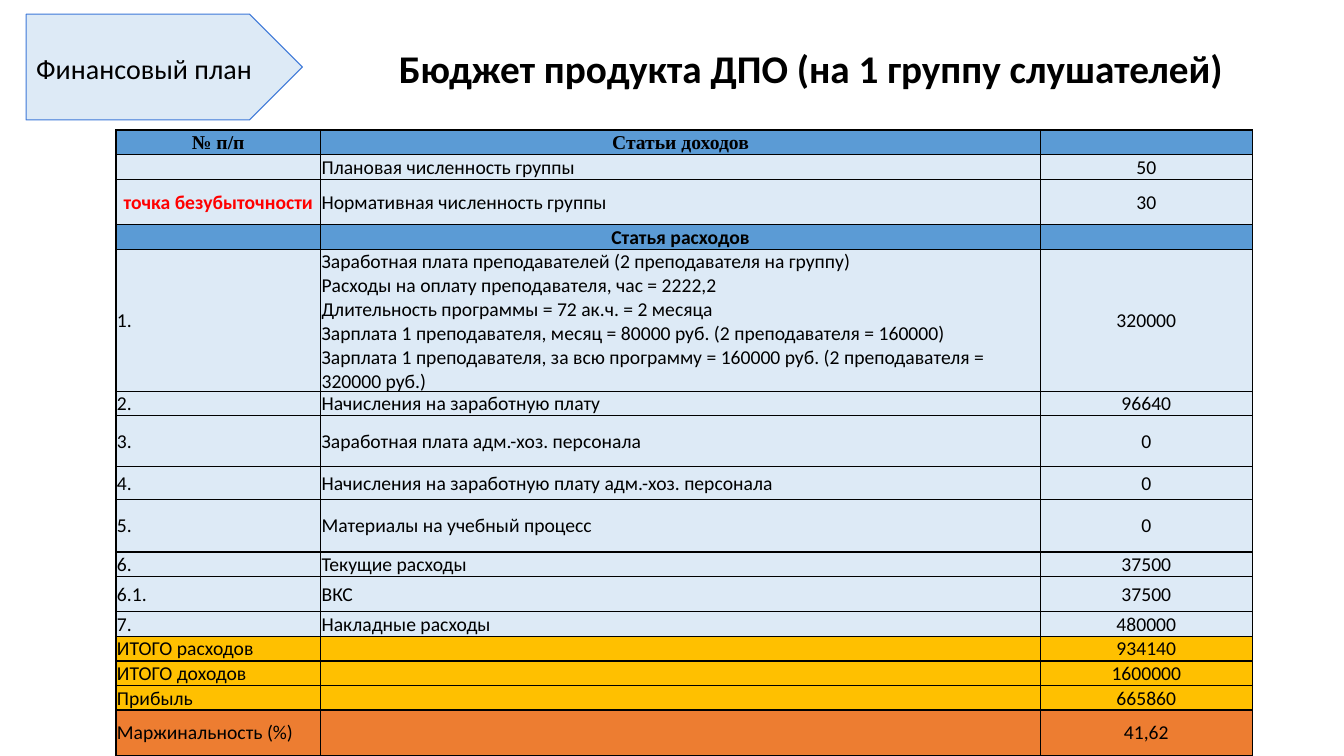
from lxml import etree
from pptx import Presentation
from pptx.dml.color import RGBColor
from pptx.enum.shapes import MSO_SHAPE
from pptx.enum.text import MSO_ANCHOR, PP_ALIGN
from pptx.oxml.ns import qn
from pptx.util import Inches, Pt

PENTAGON = MSO_SHAPE.PENTAGON
TOP, MIDDLE = MSO_ANCHOR.TOP, MSO_ANCHOR.MIDDLE
LEFT, CENTER = PP_ALIGN.LEFT, PP_ALIGN.CENTER

SECTION = "Финансовый план"
TITLE = "Бюджет продукта ДПО (на 1 группу слушателей)"
SALARY = """Заработная плата преподавателей (2 преподавателя на группу)
Расходы на оплату преподавателя, час = 2222,2
Длительность программы = 72 ак.ч. = 2 месяца
Зарплата 1 преподавателя, месяц = 80000 руб. (2 преподавателя = 160000)
Зарплата 1 преподавателя, за всю программу = 160000 руб. (2 преподавателя = 320000 руб.)"""
BUDGET = [
    ("income", 0.23, "№ п/п", "Статьи доходов", ""),
    ("item", 0.23, "", "Плановая численность группы", "50"),
    ("breakeven", 0.45, "точка безубыточности", "Нормативная численность группы", "30"),
    ("expense", 0.23, "", "Статья расходов", ""),
    ("item", 1.35, "1.", SALARY, "320000"),
    ("item", 0.23, "2.", "Начисления на заработную плату", "96640"),
    ("item", 0.5, "3.", "Заработная плата адм.-хоз. персонала", "0"),
    ("item", 0.33, "4.", "Начисления на заработную плату адм.-хоз. персонала", "0"),
    ("item", 0.52, "5.", "Материалы на учебный процесс", "0"),
    ("item", 0.23, "6.", "Текущие расходы", "37500"),
    ("item", 0.35, "6.1.", "ВКС", "37500"),
    ("item", 0.23, "7.", "Накладные расходы", "480000"),
    ("total", 0.23, "ИТОГО расходов", "", "934140"),
    ("total", 0.23, "ИТОГО доходов", "", "1600000"),
    ("total", 0.23, "Прибыль", "", "665860"),
    ("margin", 0.45, "Маржинальность (%)", "", "41,62"),
]
COLUMN_WIDTHS = [2.03, 7.14, 2.1]
FILLS = {"income": "5B9BD5", "expense": "5B9BD5", "item": "DDEAF6",
         "breakeven": "DDEAF6", "total": "FFC000", "margin": "ED7D31"}
CELL_FORMAT = {"margin_left": Inches(0.01), "margin_right": Inches(0.01),
               "margin_top": Inches(0.01), "margin_bottom": 0, "vertical_anchor": MIDDLE}


def color(value):
    return RGBColor.from_string(value)


def apply(target, values):
    for name, value in values.items():
        setattr(target, name, value)


def write(frame, text, size, align=LEFT, bold=False, ink="000000", face="Calibri", spacing=None):
    for index, line in enumerate(text.split("\n")):
        para = frame.add_paragraph() if index else frame.paragraphs[0]
        apply(para, {"alignment": align, "line_spacing": spacing})
        if not line:
            etree.SubElement(para._p, qn("a:endParaRPr"), sz=str(size * 100))
            continue
        span = para.add_run()
        span.text = line
        apply(span.font, {"size": Pt(size), "bold": bold, "name": face})
        span.font.color.rgb = color(ink)


def add_label(page, place, text, size, margin, anchor, **style):
    frame = page.shapes.add_textbox(*map(Inches, place)).text_frame
    apply(frame, {"word_wrap": True, "vertical_anchor": anchor,
                  "margin_left": Inches(0.1), "margin_right": Inches(0.1),
                  "margin_top": Inches(margin), "margin_bottom": Inches(margin)})
    write(frame, text, size, **style)


def add_borders(cell):
    properties = cell._tc.get_or_add_tcPr()
    for side in ("a:lnL", "a:lnR", "a:lnT", "a:lnB"):
        line = etree.SubElement(properties, qn(side), w=str(Pt(1)))
        fill = etree.SubElement(line, qn("a:solidFill"))
        etree.SubElement(fill, qn("a:srgbClr"), val="000000")


def add_budget(page):
    heights = [row[1] for row in BUDGET]
    place = (1.15, 1.29, sum(COLUMN_WIDTHS), sum(heights))
    table = page.shapes.add_table(len(BUDGET), len(COLUMN_WIDTHS), *map(Inches, place)).table
    for column, width in zip(table.columns, COLUMN_WIDTHS):
        column.width = Inches(width)
    for row, (kind, height, *texts) in zip(table.rows, BUDGET):
        row.height = Inches(height)
        heading = kind in ("income", "expense")
        for index, (cell, text) in enumerate(zip(row.cells, texts)):
            warning = kind == "breakeven" and index == 0
            apply(cell, CELL_FORMAT)
            add_borders(cell)
            cell.fill.solid()
            cell.fill.fore_color.rgb = color(FILLS[kind])
            write(cell.text_frame, text, 14,
                  align=CENTER if heading or warning or index == 2 else LEFT,
                  bold=heading or warning,
                  ink="FF0000" if warning else "000000",
                  face="Times New Roman" if kind == "income" else "Calibri")


def main():
    """Build the budget slide and save it."""
    deck = Presentation()
    apply(deck, {"slide_width": Inches(13.33), "slide_height": Inches(7.5)})
    page = deck.slides.add_slide(deck.slide_layouts[6])
    banner = page.shapes.add_shape(PENTAGON, *map(Inches, (0.26, 0.14, 2.74, 1.05)))
    banner.shadow.inherit = False
    banner.fill.solid()
    banner.fill.fore_color.rgb = color("DDEAF6")
    banner.line.color.rgb = color("3C78D8")
    banner.line.width = Pt(0.75)
    add_label(page, (0.26, 0.41, 2.55, 0.54), SECTION, 20, 0.1, TOP)
    add_label(page, (2.88, 0.35, 10.32, 0.61), TITLE, 28, 0.05, MIDDLE,
              align=CENTER, bold=True, spacing=1.07)
    add_budget(page)
    deck.save("out.pptx")


if __name__ == "__main__":
    main()
